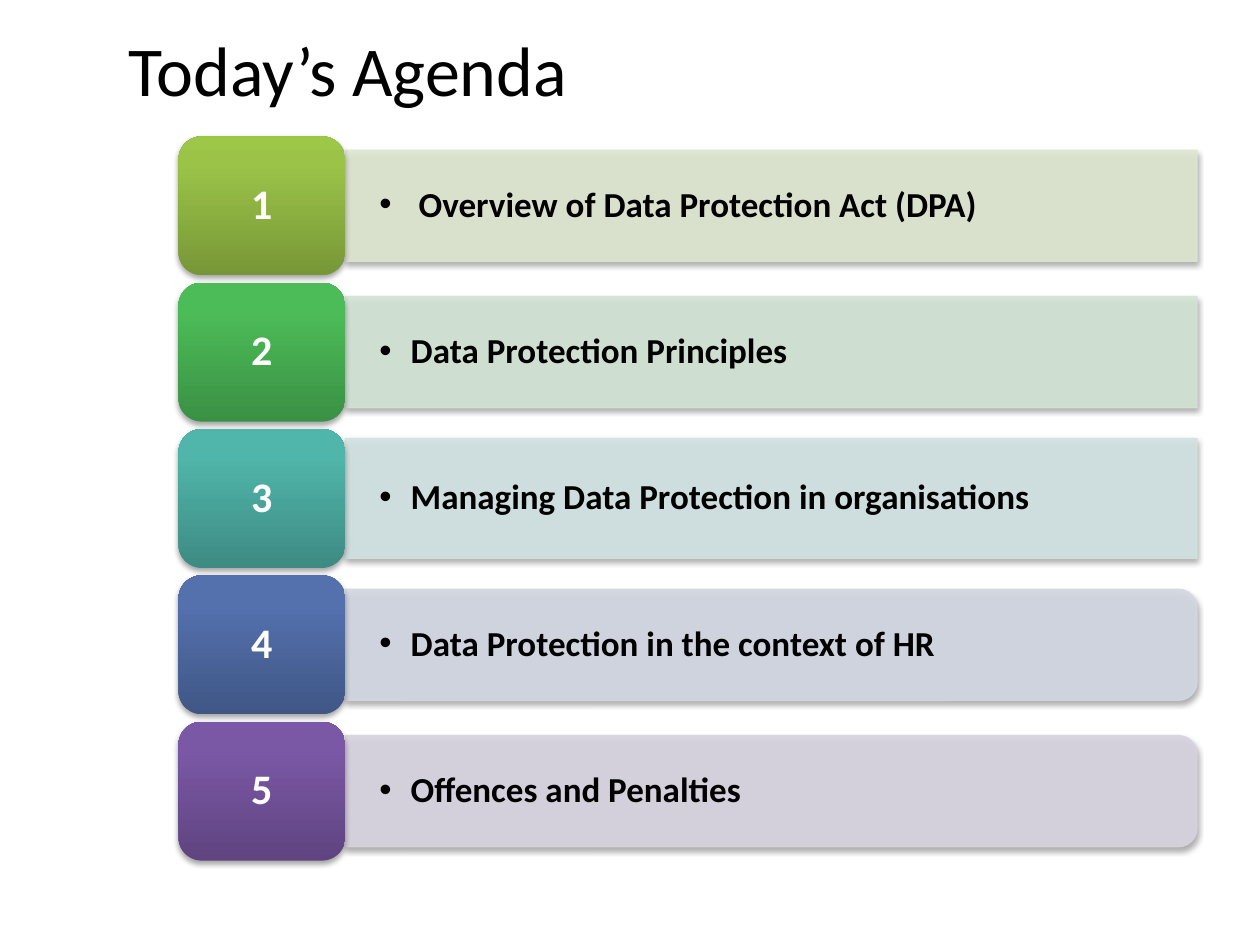
from lxml import etree
from pptx import Presentation
from pptx.dml.color import RGBColor
from pptx.enum.shapes import MSO_SHAPE
from pptx.enum.text import MSO_ANCHOR, PP_ALIGN
from pptx.oxml import parse_xml
from pptx.oxml.ns import nsdecls, qn
from pptx.util import Cm, Pt

RECTANGLE = MSO_SHAPE.RECTANGLE
ROUNDED = MSO_SHAPE.ROUNDED_RECTANGLE
ROUNDED_END = MSO_SHAPE.ROUND_2_SAME_RECTANGLE
MIDDLE = MSO_ANCHOR.MIDDLE
LEFT, CENTER = PP_ALIGN.LEFT, PP_ALIGN.CENTER

COLORS = {"text": "000000", "number": "FFFFFF", "shadow": "000000"}
TITLE_FORMAT = {"name": "Calibri", "size": Pt(40), "bold": False}
NUMBER_FORMAT = {"name": "Calibri", "size": Pt(24), "bold": True}
TOPIC_FORMAT = {"name": "Calibri", "size": Pt(20), "bold": True}

# Topic, bar shape, bar height, hanging indent (cm), bar colour, tile gradient
AGENDA = [
    ("Overview of Data Protection Act (DPA)", RECTANGLE, 2.24, 0.79,
     "DEE7D1", ("779737", "9BC348", "9DC746")),
    ("Data Protection Principles", RECTANGLE, 2.24, 0.63,
     "D2E5D5", ("3A9144", "4CBC58", "4ABF57")),
    ("Managing Data Protection in organisations", RECTANGLE, 2.42, 0.63,
     "D2E3E2", ("3D8B83", "50B5AA", "4EB8AC")),
    ("Data Protection in the context of HR", ROUNDED_END, 2.24, 0.63,
     "D3D8E2", ("405786", "5471AE", "5271B0")),
    ("Offences and Penalties", ROUNDED_END, 2.24, 0.63,
     "D8D3E0", ("5F4480", "7B58A6", "7C57A8")),
]
ROW_PITCH, TILE_WIDTH, TILE_HEIGHT = 2.95, 3.36, 2.8


def write_text(frame, text, formats, color, alignment):
    frame.word_wrap = True
    frame.vertical_anchor = MIDDLE
    paragraph = frame.paragraphs[0]
    paragraph.alignment = alignment
    run = paragraph.add_run()
    run.text = text
    for name, value in formats.items():
        setattr(run.font, name, value)
    run.font.color.rgb = RGBColor.from_string(COLORS[color])
    return paragraph


def add_shadow(shape):
    shape.shadow.inherit = False
    effects = shape._element.spPr.find(qn("a:effectLst"))
    effects.append(parse_xml(
        f'<a:outerShdw {nsdecls("a")} blurRad="40000" dist="23000" '
        f'dir="5400000" rotWithShape="0"><a:srgbClr val="{COLORS["shadow"]}">'
        '<a:alpha val="35000"/></a:srgbClr></a:outerShdw>'))


def set_gradient(shape, colors):
    """Run the three colours from the bottom edge to the top."""
    stops = "".join(
        f'<a:gs pos="{position}"><a:srgbClr val="{color}"/></a:gs>'
        for position, color in zip((0, 80000, 100000), colors))
    shape.fill.background()
    properties = shape._element.spPr
    properties.replace(properties.find(qn("a:noFill")), parse_xml(
        f'<a:gradFill {nsdecls("a")} rotWithShape="1"><a:gsLst>{stops}</a:gsLst>'
        '<a:lin ang="16200000" scaled="0"/></a:gradFill>'))


def add_bar(slide, left, top, width, height, kind, color):
    """Draw the bar upright, then turn it so rounded corners face right."""
    shift = (width - height) / 2
    bar = slide.shapes.add_shape(kind, Cm(left + shift), Cm(top - shift),
                                 Cm(height), Cm(width))
    bar.rotation = 90
    bar.fill.solid()
    bar.line.width = Pt(0.75)
    for color_format in (bar.fill.fore_color, bar.line.color):
        color_format.rgb = RGBColor.from_string(color)
    for element in bar._element.spPr.iter(qn("a:srgbClr")):
        etree.SubElement(element, qn("a:alpha")).set("val", "90000")
    add_shadow(bar)


def add_topic(slide, left, top, width, height, topic, indent):
    label = slide.shapes.add_textbox(Cm(left), Cm(top), Cm(width), Cm(height))
    frame = label.text_frame
    frame.margin_left = frame.margin_right = Cm(0.69)
    frame.margin_top = frame.margin_bottom = Cm(0.35)
    paragraph = write_text(frame, topic, TOPIC_FORMAT, "text", LEFT)
    paragraph.level = 1
    paragraph.line_spacing = 0.9
    properties = paragraph._p.get_or_add_pPr()
    properties.set("marL", str(Cm(indent)))
    properties.set("indent", str(-Cm(indent)))
    etree.SubElement(properties, qn("a:buFont")).set("typeface", "Arial")
    etree.SubElement(properties, qn("a:buChar")).set("char", "•")


def add_tile(slide, left, top, number, colors):
    tile = slide.shapes.add_shape(ROUNDED, Cm(left), Cm(top),
                                  Cm(TILE_WIDTH), Cm(TILE_HEIGHT))
    set_gradient(tile, colors)
    tile.line.fill.background()
    add_shadow(tile)
    paragraph = write_text(tile.text_frame, str(number), NUMBER_FORMAT,
                           "number", CENTER)
    paragraph.line_spacing = 0.9


def add_agenda(slide, left, top, width):
    bar_left, bar_width = left + TILE_WIDTH, width - TILE_WIDTH
    for index, (topic, kind, height, indent, color, gradient) in enumerate(AGENDA):
        row_top = top + index * ROW_PITCH
        bar_top = row_top + (TILE_HEIGHT - height) / 2
        add_bar(slide, bar_left, bar_top, bar_width, height, kind, color)
        add_topic(slide, bar_left, bar_top, bar_width, height, topic, indent)
        add_tile(slide, left, row_top, index + 1, gradient)


def add_title(slide, left, top, width, height):
    title = slide.shapes.title
    title.left, title.top = Cm(left), Cm(top)
    title.width, title.height = Cm(width), Cm(height)
    write_text(title.text_frame, "Today’s Agenda", TITLE_FORMAT, "text", LEFT)


def main():
    presentation = Presentation()
    presentation.slide_width, presentation.slide_height = Cm(25.4), Cm(19.05)
    slide = presentation.slides.add_slide(presentation.slide_layouts[5])
    add_agenda(slide, 3.6, 2.75, 20.53)
    add_title(slide, 2.34, -0.2, 22.43, 3.18)
    presentation.save("out.pptx")


if __name__ == "__main__":
    main()
